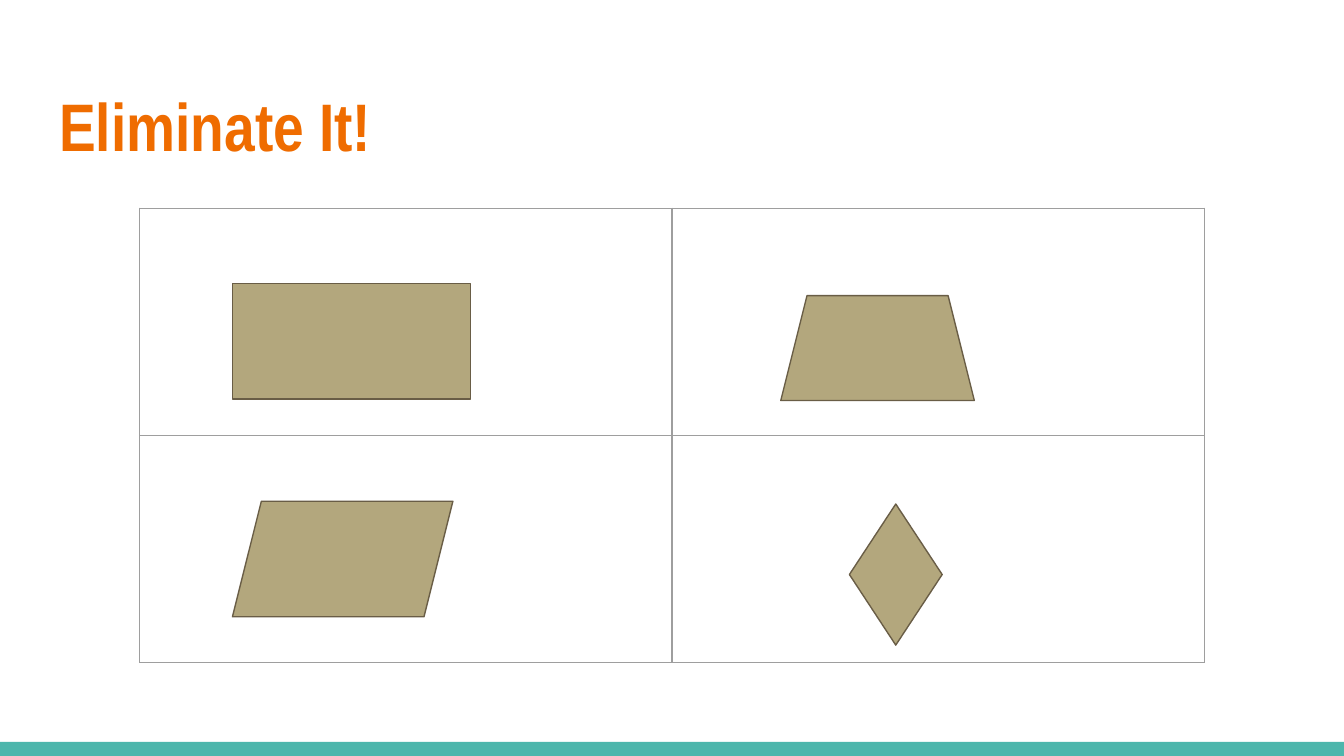
from dataclasses import dataclass

from lxml.etree import SubElement
from pptx import Presentation
from pptx.dml.color import RGBColor
from pptx.enum.shapes import MSO_SHAPE as Preset
from pptx.enum.text import MSO_ANCHOR as Anchor, PP_ALIGN as Align
from pptx.oxml.ns import qn
from pptx.slide import Slide
from pptx.table import _Cell as Cell
from pptx.util import Inches, Pt

TEAL = RGBColor(0x4D, 0xB6, 0xAC)
ORANGE = RGBColor(0xEF, 0x6C, 0x00)
TAN = RGBColor(0xB3, 0xA7, 0x7D)
BROWN = RGBColor(0x69, 0x5D, 0x46)
GREY = RGBColor(0x9E, 0x9E, 0x9E)
RULE_WIDTH = Pt(0.75)


@dataclass
class Figure:
    preset: Preset
    left: float
    top: float
    width: float
    height: float
    fill: RGBColor = TAN
    outline: RGBColor | None = BROWN


FOOTER_BAND = Figure(Preset.RECTANGLE, 0, 5.52, 10, 0.11, TEAL, None)
QUADRILATERALS = [
    Figure(Preset.RECTANGLE, 1.73, 2.11, 1.77, 0.86),
    Figure(Preset.TRAPEZOID, 5.81, 2.2, 1.44, 0.78),
    Figure(Preset.PARALLELOGRAM, 1.73, 3.73, 1.64, 0.86),
    Figure(Preset.DIAMOND, 6.32, 3.75, 0.69, 1.05),
]


def draw_figure(slide: Slide, figure: Figure) -> None:
    shape = slide.shapes.add_shape(
        figure.preset, Inches(figure.left), Inches(figure.top),
        Inches(figure.width), Inches(figure.height))
    shape.shadow.inherit = False
    shape.fill.solid()
    shape.fill.fore_color.rgb = figure.fill
    if figure.outline is None:
        shape.line.fill.background()
    else:
        shape.line.color.rgb = figure.outline
        shape.line.width = RULE_WIDTH


def draw_title(slide: Slide, wording: str) -> None:
    title = slide.shapes.title
    title.left, title.top = Inches(0.34), Inches(0.53)
    title.width, title.height = Inches(9.32), Inches(0.63)
    frame = title.text_frame
    frame.text = wording
    frame.word_wrap = True
    frame.vertical_anchor = Anchor.TOP
    frame.margin_left = frame.margin_right = Inches(0.1)
    frame.margin_top = frame.margin_bottom = Inches(0.1)
    paragraph = frame.paragraphs[0]
    paragraph.alignment = Align.LEFT
    font = paragraph.runs[0].font
    font.name, font.size, font.bold = "Arial Narrow", Pt(36), True
    font.color.rgb = ORANGE


def style_cell(cell: Cell) -> None:
    # Borders must come before the fill in the cell properties
    properties = cell._tc.get_or_add_tcPr()
    for side in ("lnL", "lnR", "lnT", "lnB"):
        border = SubElement(properties, qn(f"a:{side}"), w=str(RULE_WIDTH))
        paint = SubElement(border, qn("a:solidFill"))
        SubElement(paint, qn("a:srgbClr"), val=str(GREY))
    cell.fill.background()


def draw_grid(slide: Slide) -> None:
    grid = slide.shapes.add_table(
        2, 2, Inches(1.04), Inches(1.55), Inches(7.92), Inches(3.38)).table
    grid.first_row = grid.horz_banding = False
    for cell in grid.iter_cells():
        style_cell(cell)


def main() -> None:
    # Widescreen 16:9 page
    deck = Presentation()
    deck.slide_width = Inches(10)
    deck.slide_height = deck.slide_width * 9 // 16
    slide = deck.slides.add_slide(deck.slide_layouts[5])

    # Footer band and title
    draw_figure(slide, FOOTER_BAND)
    draw_title(slide, "Eliminate It!")

    # Two-by-two grid with one quadrilateral per cell
    draw_grid(slide)
    for quadrilateral in QUADRILATERALS:
        draw_figure(slide, quadrilateral)

    deck.save("out.pptx")


if __name__ == "__main__":
    main()
